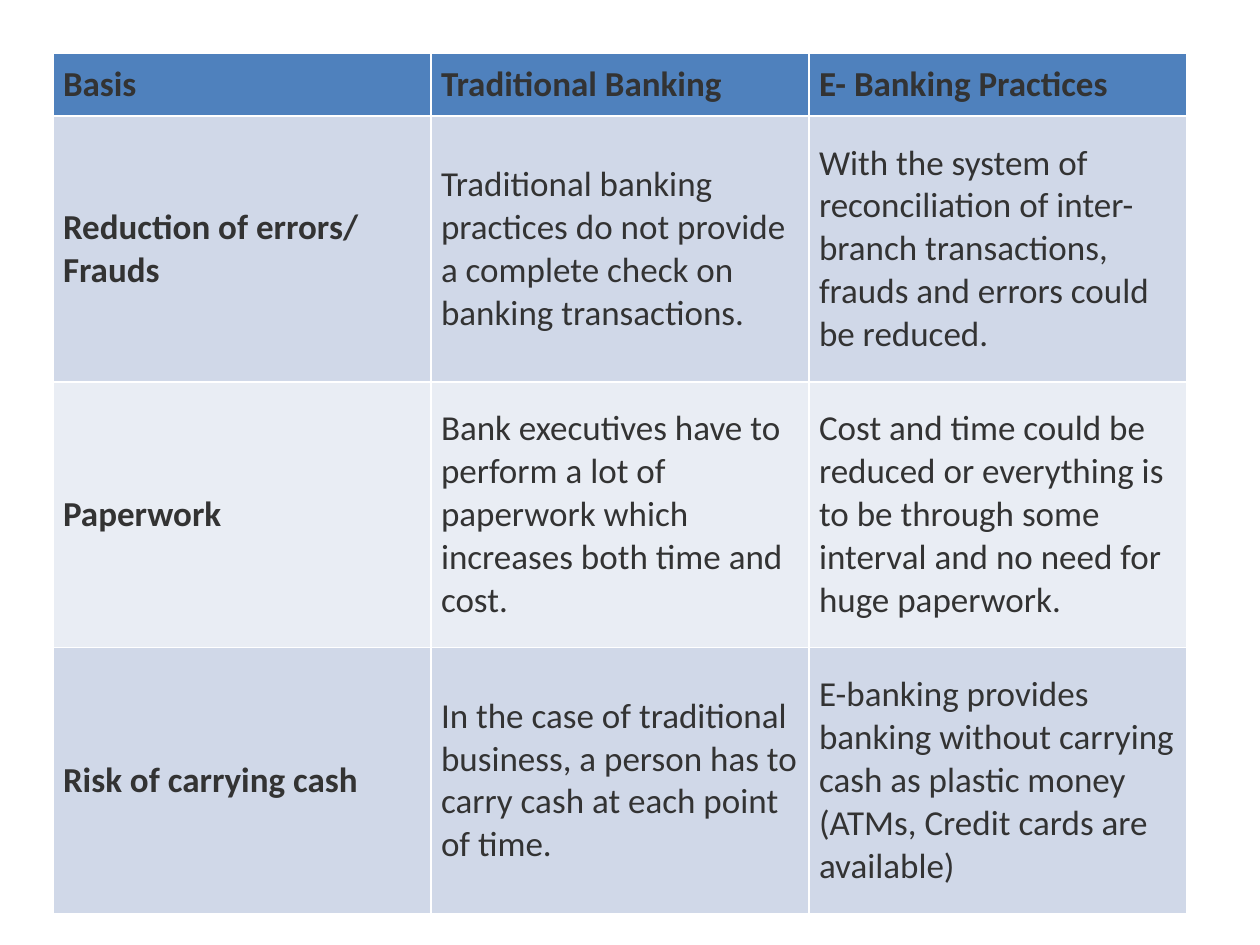
from pptx import Presentation
from pptx.dml.color import RGBColor
from pptx.enum.text import MSO_ANCHOR, PP_ALIGN
from pptx.util import Inches, Pt

COLORS = {
    "header": "4F81BD",
    "odd": "D0D8E8",
    "even": "E9EDF4",
    "text": "333333",
}
FONT, FONT_SIZE = "Calibri", 20
SLIDE_WIDTH, SLIDE_HEIGHT = 10, 7.5

# Table place and grid, in inches
LEFT = TOP = 0.42
TABLE_WIDTH = 0.9 * SLIDE_WIDTH
HEADER_HEIGHT, BODY_HEIGHT = 0.5, 2.11
MARGIN_X, MARGIN_Y = 0.08, 0.04

ROWS = [
    ("Basis", "Traditional Banking", "E- Banking Practices"),
    (
        "Reduction of errors/ Frauds",
        "Traditional banking practices do not provide a complete check on "
        "banking transactions.",
        "With the system of reconciliation of inter-branch transactions, "
        "frauds and errors could be reduced.",
    ),
    (
        "Paperwork",
        "Bank executives have to perform a lot of paperwork which increases "
        "both time and cost.",
        "Cost and time could be reduced or everything is to be through some "
        "interval and no need for huge paperwork.",
    ),
    (
        "Risk of carrying cash",
        "In the case of traditional business, a person has to carry cash at "
        "each point of time.",
        "E-banking provides banking without carrying cash as plastic money "
        "(ATMs, Credit cards are available)",
    ),
]


def row_color(row_index):
    if row_index == 0:
        return COLORS["header"]
    return COLORS["odd"] if row_index % 2 else COLORS["even"]


def fill_cell(cell, text, color, bold):
    cell.fill.solid()
    cell.fill.fore_color.rgb = RGBColor.from_string(color)
    cell.vertical_anchor = MSO_ANCHOR.MIDDLE
    cell.margin_left = cell.margin_right = Inches(MARGIN_X)
    cell.margin_top = cell.margin_bottom = Inches(MARGIN_Y)
    cell.text_frame.text = text
    paragraph = cell.text_frame.paragraphs[0]
    paragraph.alignment = PP_ALIGN.LEFT
    font = paragraph.runs[0].font
    font.name, font.size, font.bold = FONT, Pt(FONT_SIZE), bold
    font.color.rgb = RGBColor.from_string(COLORS["text"])


def add_comparison_table(slide):
    # The default table style supplies the white rules
    heights = [HEADER_HEIGHT] + [BODY_HEIGHT] * (len(ROWS) - 1)
    table = slide.shapes.add_table(
        len(ROWS), len(ROWS[0]), Inches(LEFT), Inches(TOP),
        Inches(TABLE_WIDTH), Inches(sum(heights)),
    ).table
    for row_index, texts in enumerate(ROWS):
        table.rows[row_index].height = Inches(heights[row_index])
        for column_index, text in enumerate(texts):
            # Header row and first column are bold
            bold = row_index == 0 or column_index == 0
            fill_cell(table.cell(row_index, column_index), text,
                      row_color(row_index), bold)


def main():
    presentation = Presentation()
    presentation.slide_width = Inches(SLIDE_WIDTH)
    presentation.slide_height = Inches(SLIDE_HEIGHT)
    slide = presentation.slides.add_slide(presentation.slide_layouts[6])
    add_comparison_table(slide)
    presentation.save("out.pptx")


if __name__ == "__main__":
    main()
